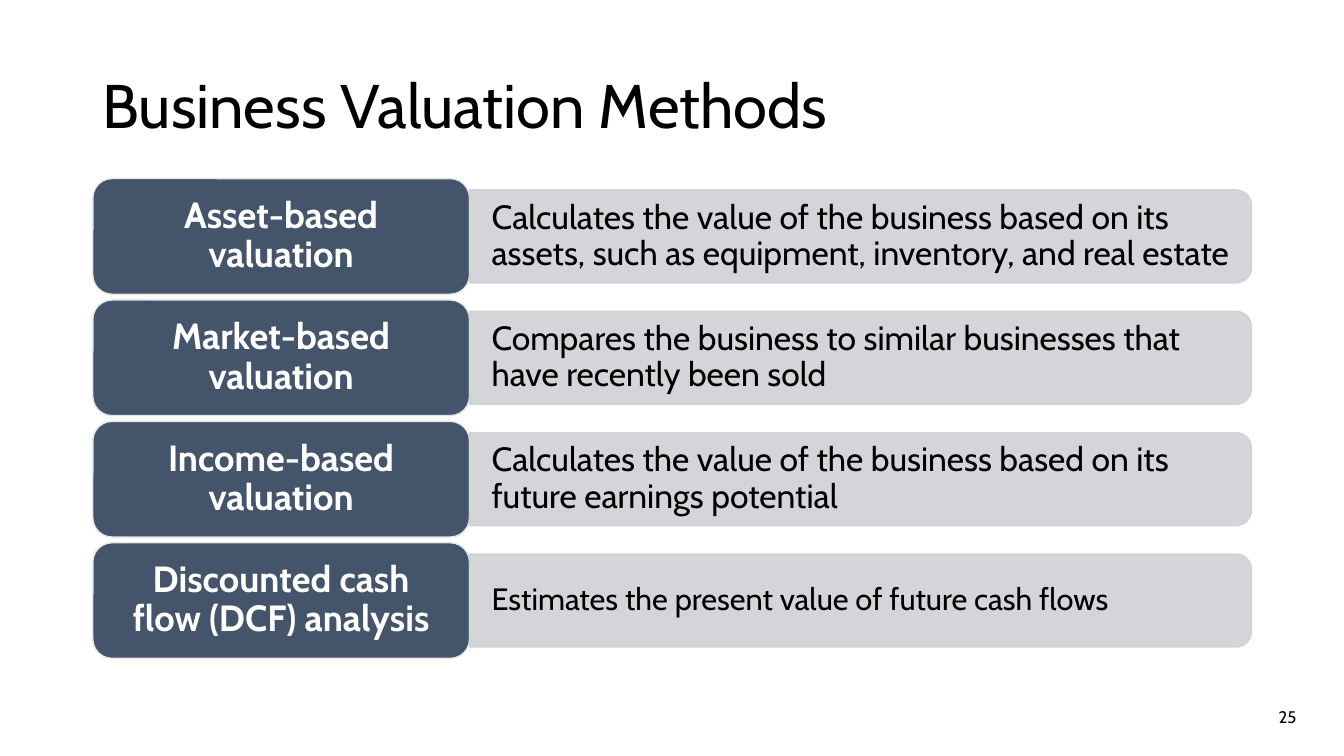
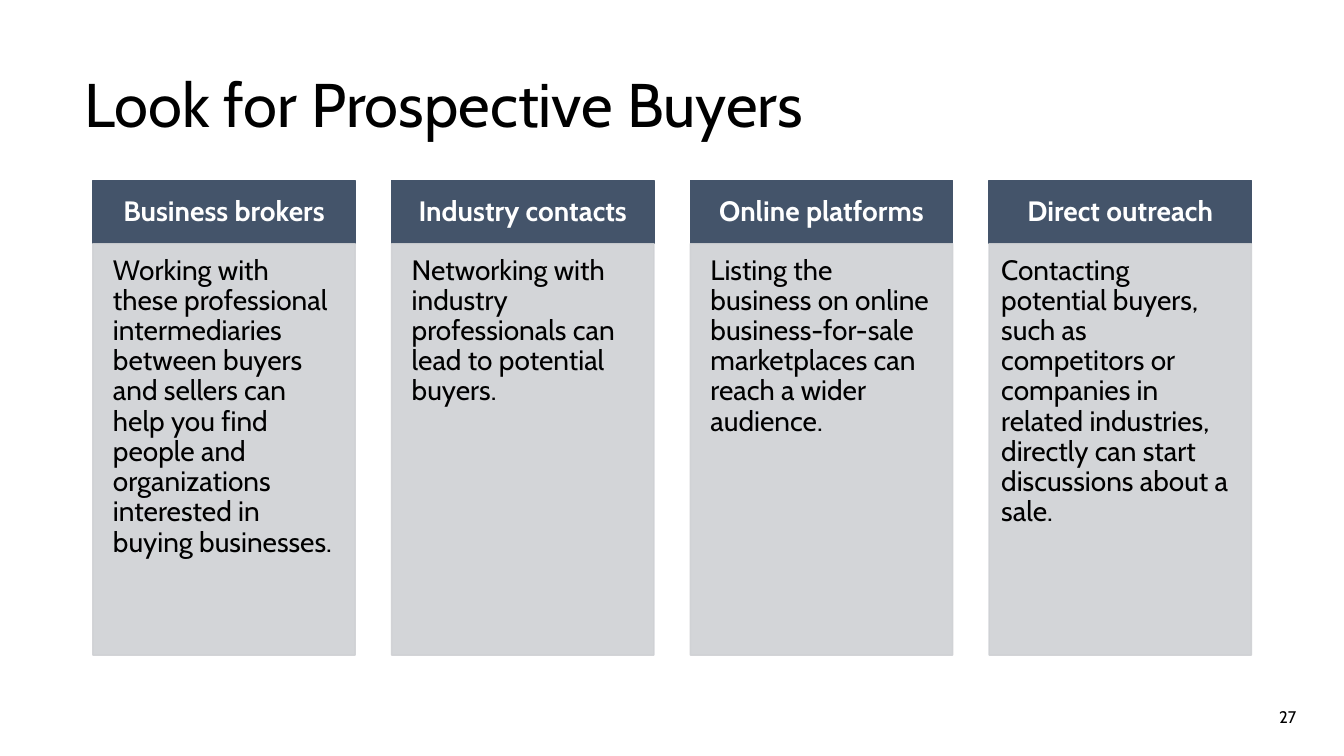
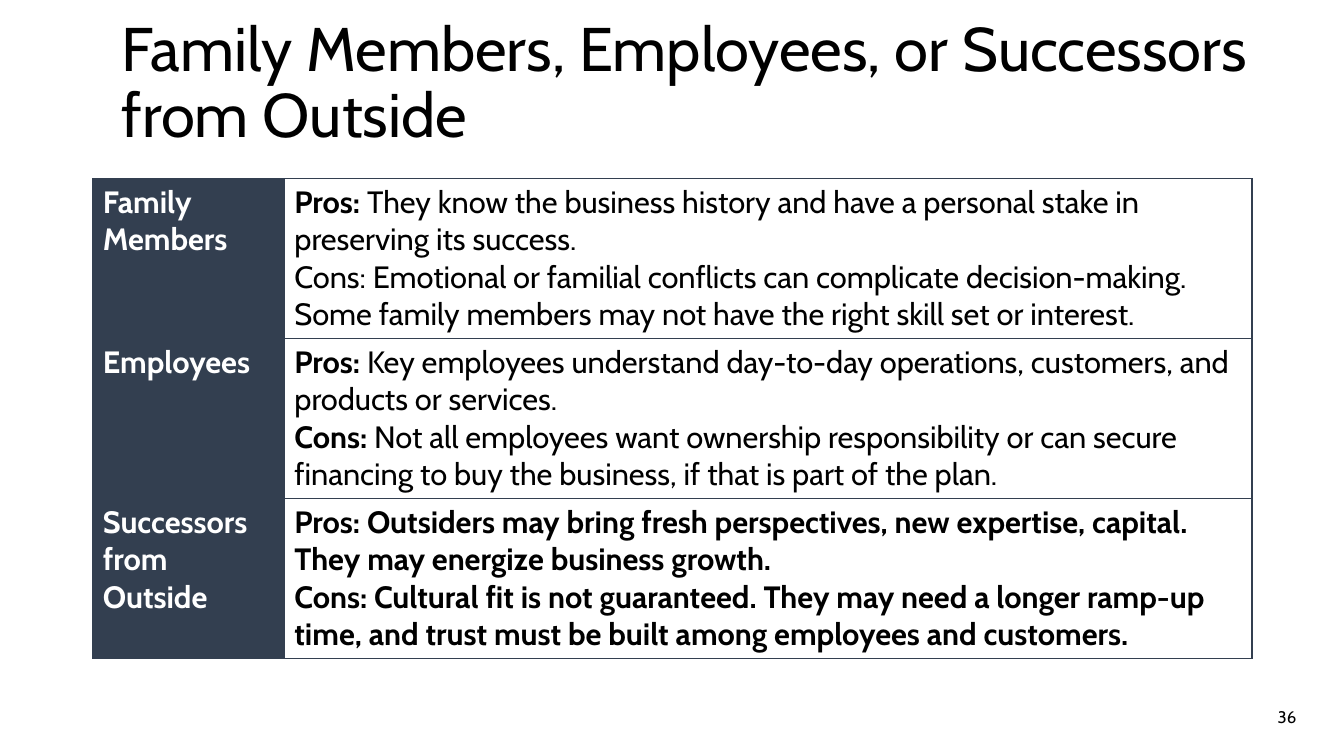
"""Build three slides on valuing a business and handing it over."""
from dataclasses import dataclass
from math import cos, pi, sin
from typing import Optional, Sequence

from pptx import Presentation
from pptx.dml.color import RGBColor
from pptx.enum.shapes import MSO_SHAPE as Preset
from pptx.enum.text import MSO_ANCHOR as Anchor, PP_ALIGN as Align
from pptx.oxml.ns import qn
from pptx.oxml.xmlchemy import OxmlElement
from pptx.util import Pt

FONT = "Cabin"
COLORS = {
    "text": "000000",
    "white": "FFFFFF",
    "slate": "44546A",
    "panel": "CFD1D4",
    "outline": "E7E6E6",
    "navy": "333F50",
}
LEFT = 66.3
PANEL_ALPHA = 90
MARGINS = (7.2, 3.6, 7.2, 3.6)


@dataclass(frozen=True)
class Box:
    left: float
    top: float
    width: float
    height: float

    def lengths(self):
        return Pt(self.left), Pt(self.top), Pt(self.width), Pt(self.height)


@dataclass(frozen=True)
class Span:
    text: str
    bold: bool = False


@dataclass(frozen=True)
class Method:
    name: str
    description: str
    size: float = 24


@dataclass(frozen=True)
class Channel:
    name: str
    description: str
    margins: tuple = (14.4, 8.64, 14.4, 12.24)


@dataclass(frozen=True)
class Successor:
    name: str
    paragraphs: Sequence[Sequence[Span]]


METHODS = (
    Method("Asset-based valuation",
           "Calculates the value of the business based on its assets, "
           "such as equipment, inventory, and real estate"),
    Method("Market-based valuation",
           "Compares the business to similar businesses that have recently been sold"),
    Method("Income-based valuation",
           "Calculates the value of the business based on its future earnings potential"),
    Method("Discounted cash flow (DCF) analysis",
           "Estimates the present value of future cash flows", size=22),
)

CHANNELS = (
    Channel("Business brokers",
            "Working with these professional intermediaries between buyers and sellers can "
            "help you find people and organizations interested in buying businesses."),
    Channel("Industry contacts",
            "Networking with industry professionals can lead to potential buyers."),
    Channel("Online platforms",
            "Listing the business on online business-for-sale marketplaces can reach "
            "a wider audience."),
    Channel("Direct outreach",
            "Contacting potential buyers, such as competitors or companies in related "
            "industries, directly can start discussions about a sale.",
            margins=(8.64, 8.64, 11.52, 12.24)),
)

SUCCESSORS = (
    Successor("Family Members", (
        (Span("Pros: ", True),
         Span("They know the business history and have a personal stake in "
              "preserving its success.")),
        (Span("Cons: Emotional or familial conflicts can complicate decision-making. "
              "Some family members may not have the right skill set or interest."),),
    )),
    Successor("Employees", (
        (Span("Pros: ", True),
         Span("Key employees understand day-to-day operations, customers, and "
              "products or services.")),
        (Span("Cons: ", True),
         Span("Not all employees want ownership responsibility or can secure financing "
              "to buy the business, if that is part of the plan.")),
    )),
    Successor("Successors from Outside", (
        (Span("Pros: Outsiders may bring fresh perspectives, new expertise, capital. "
              "They may energize business growth.", True),),
        (Span("Cons: Cultural fit is not guaranteed. They may need a longer ramp-up time, "
              "and trust must be built among employees and customers.", True),),
    )),
)


def rgb(color: str) -> RGBColor:
    return RGBColor.from_string(COLORS[color])


def write_text(frame, *paragraphs: Sequence[Span], size: float, color: str = "text",
               align: Align = Align.LEFT, anchor: Optional[Anchor] = None,
               margins: Optional[tuple] = None, line_spacing: float = 1.0) -> None:
    frame.word_wrap = True
    if anchor is not None:
        frame.vertical_anchor = anchor
    if margins is not None:
        (frame.margin_left, frame.margin_top,
         frame.margin_right, frame.margin_bottom) = map(Pt, margins)
    for index, spans in enumerate(paragraphs):
        para = frame.add_paragraph() if index else frame.paragraphs[0]
        para.alignment = align
        para.line_spacing = line_spacing
        for span in spans:
            run = para.add_run()
            run.text = span.text
            run.font.name = FONT
            run.font.size = Pt(size)
            run.font.bold = span.bold
            run.font.color.rgb = rgb(color)


def paint(shape, fill: str, line: str, alpha: int = 100) -> None:
    shape.shadow.inherit = False
    shape.fill.solid()
    shape.fill.fore_color.rgb = rgb(fill)
    shape.line.color.rgb = rgb(line)
    shape.line.width = Pt(1)
    if alpha < 100:
        for color in shape.element.spPr.iter(qn("a:srgbClr")):
            opacity = OxmlElement("a:alpha")
            opacity.set("val", str(alpha * 1000))
            color.append(opacity)


def add_text(page, box: Box, text: str, **text_format) -> None:
    frame = page.shapes.add_textbox(*box.lengths()).text_frame
    write_text(frame, (Span(text),), margins=MARGINS, **text_format)


def add_page(deck, title: str, title_box: Box, number: int):
    page = deck.slides.add_slide(deck.slide_layouts[6])
    add_text(page, title_box, title, size=44, anchor=Anchor.BOTTOM, line_spacing=0.9)
    add_text(page, Box(717.1, 497.5, 216, 28.8), str(number), size=12,
             align=Align.RIGHT, anchor=Anchor.MIDDLE)
    return page


def add_heading(page, preset: Preset, box: Box, text: str, size: float,
                line: str, margins: tuple) -> None:
    shape = page.shapes.add_shape(preset, *box.lengths())
    paint(shape, "slate", line)
    write_text(shape.text_frame, (Span(text, True),), size=size, color="white",
               align=Align.CENTER, anchor=Anchor.MIDDLE, margins=margins, line_spacing=0.9)


def add_right_rounded_bar(page, box: Box, radius: float = 11.1, steps: int = 10):
    """Draw a bar with a square left end and rounded right corners."""
    right, bottom = box.left + box.width, box.top + box.height
    corners = ((box.top + radius, -pi / 2), (bottom - radius, 0))
    outline = [
        (Pt(right - radius + radius * cos(start + step * pi / 2 / steps)),
         Pt(center + radius * sin(start + step * pi / 2 / steps)))
        for center, start in corners
        for step in range(steps + 1)
    ]
    builder = page.shapes.build_freeform(Pt(box.left), Pt(box.top))
    builder.add_line_segments(outline + [(Pt(box.left), Pt(bottom))])
    return builder.convert_to_shape()


def draw_methods(deck) -> None:
    page = add_page(deck, "Business Valuation Methods", Box(66, 0.7, 828, 104.4), 25)
    top, pitch, label_width, label_height = 127.6, 86.7, 269.1, 82.6
    bar_width, bar_height = 558.6, 66.4
    for index, method in enumerate(METHODS):
        label = Box(LEFT, top + index * pitch, label_width, label_height)
        bar = Box(LEFT + label_width, label.top + (label_height - bar_height) / 2,
                  bar_width, bar_height)
        add_heading(page, Preset.ROUNDED_RECTANGLE, label, method.name, 26,
                    "outline", (13, 8.64, 13, 8.64))
        shape = add_right_rounded_bar(page, bar)
        paint(shape, "panel", "panel", PANEL_ALPHA)
        write_text(shape.text_frame, (Span(method.description),), size=method.size,
                   anchor=Anchor.MIDDLE, margins=(15.8, 6.5, 10, 6.5), line_spacing=0.9)


def draw_channels(deck) -> None:
    page = add_page(deck, "Look for Prospective Buyers", Box(53.3, 0, 828, 104.4), 27)
    top, pitch, width, heading_height, body_height = 128.9, 213.4, 187.4, 45.2, 293.9
    for index, channel in enumerate(CHANNELS):
        heading = Box(LEFT + index * pitch, top, width, heading_height)
        body = Box(heading.left, top + heading_height, width, body_height)
        add_heading(page, Preset.RECTANGLE, heading, channel.name, 20,
                    "slate", (11.5, 6.5, 11.5, 6.5))
        shape = page.shapes.add_shape(Preset.RECTANGLE, *body.lengths())
        paint(shape, "panel", "panel", PANEL_ALPHA)
        write_text(shape.text_frame, (Span(channel.description),), size=20,
                   anchor=Anchor.TOP, margins=channel.margins, line_spacing=0.9)


def style_cell(cell, fill: str, border: str) -> None:
    properties = cell._tc.get_or_add_tcPr()
    for side in ("a:lnL", "a:lnR", "a:lnT", "a:lnB"):
        line = OxmlElement(side)
        line.set("w", str(Pt(1)))
        solid = OxmlElement("a:solidFill")
        color = OxmlElement("a:srgbClr")
        color.set("val", COLORS[border])
        solid.append(color)
        line.append(solid)
        properties.append(line)
    cell.fill.solid()
    cell.fill.fore_color.rgb = rgb(fill)


def draw_successors(deck) -> None:
    page = add_page(deck, "Family Members, Employees, or Successors from Outside",
                    Box(79.9, -0.7, 828, 112.3), 36)
    widths, row_height = (136.8, 691.2), 114.2
    box = Box(LEFT, 127.6, sum(widths), row_height * len(SUCCESSORS))
    table = page.shapes.add_table(len(SUCCESSORS), len(widths), *box.lengths()).table
    table.first_row = table.horz_banding = False
    for column, width in zip(table.columns, widths):
        column.width = Pt(width)
    for row, successor in zip(table.rows, SUCCESSORS):
        row.height = Pt(row_height)
        name, details = row.cells
        style_cell(name, "navy", "navy")
        style_cell(details, "white", "navy")
        write_text(name.text_frame, (Span(successor.name, True),), size=22, color="white")
        write_text(details.text_frame, *successor.paragraphs, size=22)


def main() -> None:
    deck = Presentation()
    deck.slide_width, deck.slide_height = Pt(960), Pt(540)
    draw_methods(deck)
    draw_channels(deck)
    draw_successors(deck)
    deck.save("out.pptx")


if __name__ == "__main__":
    main()
